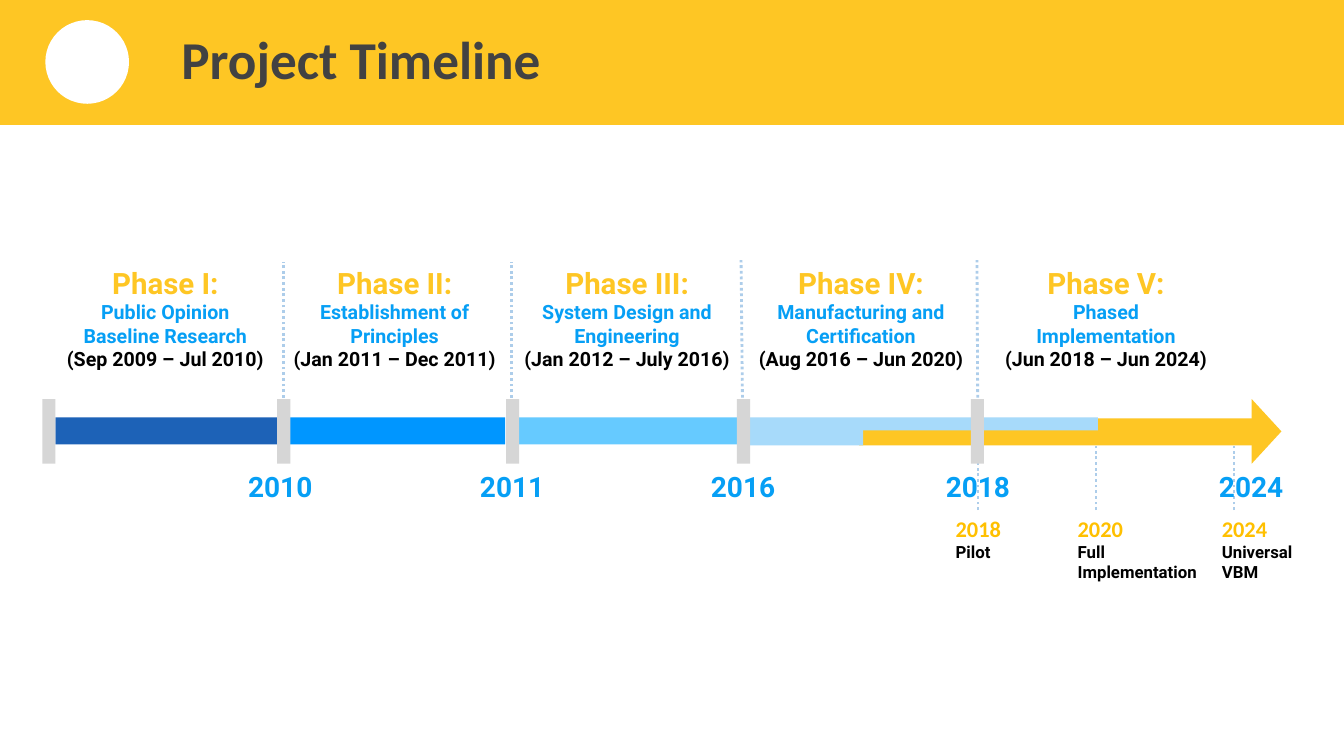
from dataclasses import dataclass

from lxml import etree
from pptx import Presentation
from pptx import util as u
from pptx.dml.color import RGBColor
from pptx.enum import dml, shapes, text
from pptx.oxml.ns import qn

YELLOW, GOLD, BLUE, PALE_BLUE = "FEC624", "FFC000", "069FF5", "A7DAFA"
GREY, DOT_BLUE, WHITE, BLACK = "D6D6D6", "ADCDEA", "FFFFFF", "000000"
BAR_TOP, BAR_HEIGHT = 4.14, 0.27
MARK_TOP, MARK_WIDTH, MARK_HEIGHT = 3.96, 0.13, 0.64
RECTANGLE = shapes.MSO_SHAPE.RECTANGLE


@dataclass
class Phase:
    name: str
    topic: list[str]
    dates: str
    left: float
    width: float


@dataclass
class Bar:
    left: float
    top: float
    width: float
    height: float
    color: str


@dataclass
class Callout:
    year: str
    details: list[str]
    left: float
    width: float
    line_x: float


@dataclass
class Line:
    content: str
    size: float
    color: str
    font: str = "Roboto"


PHASES = [
    Phase("Phase I:", ["Public Opinion", "Baseline Research"], "(Sep 2009 – Jul 2010)", 0.58, 2.12),
    Phase("Phase II:", ["Establishment of", "Principles"], "(Jan 2011 – Dec 2011)", 2.78, 2.27),
    Phase("Phase III:", ["System Design and", "Engineering"], "(Jan 2012 – July 2016)", 5.12, 2.2),
    Phase("Phase IV:", ["Manufacturing and", "Certification"], "(Aug 2016 – Jun 2020)", 7.39, 2.3),
    Phase("Phase V:", ["Phased", "Implementation"], "(Jun 2018 – Jun 2024)", 9.82, 2.3),
]
BARS = [
    Bar(8.52, 4.15, 3.9, BAR_HEIGHT, YELLOW),
    Bar(7.42, BAR_TOP, 3.47, 0.13, PALE_BLUE),
    Bar(7.41, 4.22, 1.15, 0.2, PALE_BLUE),
    Bar(0.55, BAR_TOP, 2.3, BAR_HEIGHT, "1D62B7"),
    Bar(2.81, BAR_TOP, 2.2, BAR_HEIGHT, "0096FF"),
    Bar(5.11, BAR_TOP, 2.2, BAR_HEIGHT, "66CAFF"),
]
CALLOUTS = [
    Callout("2018", ["Pilot"], 9.38, 0.75, 9.7),
    Callout("2020", ["Full", "Implementation"], 10.59, 2.02, 10.87),
    Callout("2024", ["Universal VBM"], 12.02, 1.02, 12.24),
]
DIVIDERS = [(2.81, 2.81, 2.6), (5.07, 5.07, 2.6), (7.37, 7.35, 2.58), (9.7, 9.69, 2.58)]
MARKS = [0.42, 2.75, 5.02, 7.31, 9.63]
YEARS = {"2010": 2.28, "2011": 4.58, "2016": 6.87, "2018": 9.2, "2024": 11.91}


def rgb(color: str) -> RGBColor:
    return RGBColor.from_string(color)


def add_block(slide, kind, left: float, top: float, width: float, height: float, color: str):
    shape = slide.shapes.add_shape(
        kind, u.Inches(left), u.Inches(top), u.Inches(width), u.Inches(height))
    shape.shadow.inherit = False
    shape.fill.solid()
    shape.fill.fore_color.rgb = rgb(color)
    shape.line.fill.background()
    return shape


def add_dotted_line(slide, x1: float, y1: float, x2: float, y2: float) -> None:
    connector = slide.shapes.add_connector(
        shapes.MSO_CONNECTOR.STRAIGHT, u.Inches(x1), u.Inches(y1), u.Inches(x2), u.Inches(y2))
    connector.line.color.rgb = rgb(DOT_BLUE)
    connector.line.width = u.Pt(2)
    connector.line.dash_style = dml.MSO_LINE.ROUND_DOT
    etree.SubElement(connector._element.spPr, qn("a:effectLst"))


def add_text(slide, lines: list[Line], left: float, top: float, width: float, height: float, *,
             align=text.PP_ALIGN.LEFT, anchor=text.MSO_ANCHOR.TOP,
             side_inset: float = 0.1, spacing: float = 1.0) -> None:
    box = slide.shapes.add_textbox(
        u.Inches(left), u.Inches(top), u.Inches(width), u.Inches(height))
    frame = box.text_frame
    frame.word_wrap = True
    frame.vertical_anchor = anchor
    frame.margin_left = frame.margin_right = u.Inches(side_inset)
    frame.margin_top = frame.margin_bottom = u.Inches(0.05)
    for index, line in enumerate(lines):
        paragraph = frame.add_paragraph() if index else frame.paragraphs[0]
        paragraph.alignment = align
        paragraph.line_spacing = spacing
        run = paragraph.add_run()
        run.text = line.content
        run.font.name = line.font
        run.font.size = u.Pt(line.size)
        run.font.bold = True
        run.font.color.rgb = rgb(line.color)


def main() -> None:
    presentation = Presentation()
    presentation.slide_width = u.Inches(13.33)
    presentation.slide_height = u.Inches(7.5)
    slide = presentation.slides.add_slide(presentation.slide_layouts[6])

    # Header
    add_block(slide, RECTANGLE, -0.03, -0.02, 13.4, 1.26, YELLOW)
    add_block(slide, shapes.MSO_SHAPE.OVAL, 0.45, 0.2, 0.83, 0.83, WHITE)
    add_text(slide, [Line("Project Timeline", 38, "424242", "Calibri")], 1.7, 0.2, 10.71, 0.84,
             anchor=text.MSO_ANCHOR.MIDDLE, spacing=0.9)

    # Phase dividers and descriptions
    for bottom_x, top_x, top in DIVIDERS:
        add_dotted_line(slide, bottom_x, 4.56, top_x, top)
    for phase in PHASES:
        lines = [Line(phase.name, 21, YELLOW)]
        lines += [Line(topic, 14, BLUE) for topic in phase.topic]
        lines.append(Line(phase.dates, 14, BLACK))
        add_text(slide, lines, phase.left, 2.58, phase.width, 1.3,
                 align=text.PP_ALIGN.CENTER, side_inset=0.05)

    # Timeline bar, arrowhead and marks
    for bar in BARS:
        add_block(slide, RECTANGLE, bar.left, bar.top, bar.width, bar.height, bar.color)
    arrow = add_block(slide, shapes.MSO_SHAPE.RIGHT_ARROW, 12.25, MARK_TOP, 0.46, 0.64, YELLOW)
    arrow.adjustments[0] = 0.32
    arrow.adjustments[1] = 0.64

    # Callouts below the bar
    for callout in CALLOUTS:
        add_dotted_line(slide, callout.line_x, 5.06, callout.line_x, 4.42)
        lines = [Line(callout.year, 16, GOLD, "Calibri")]
        lines += [Line(detail, 12, BLACK) for detail in callout.details]
        add_text(slide, lines, callout.left, 5.06, callout.width, 0.77)

    for left in MARKS:
        add_block(slide, RECTANGLE, left, MARK_TOP, MARK_WIDTH, MARK_HEIGHT, GREY)

    # Year labels
    for year, left in YEARS.items():
        add_text(slide, [Line(year, 20, BLUE)], left, 4.61, 1, 0.64,
                 align=text.PP_ALIGN.CENTER, side_inset=0.05)

    presentation.save("out.pptx")


if __name__ == "__main__":
    main()
